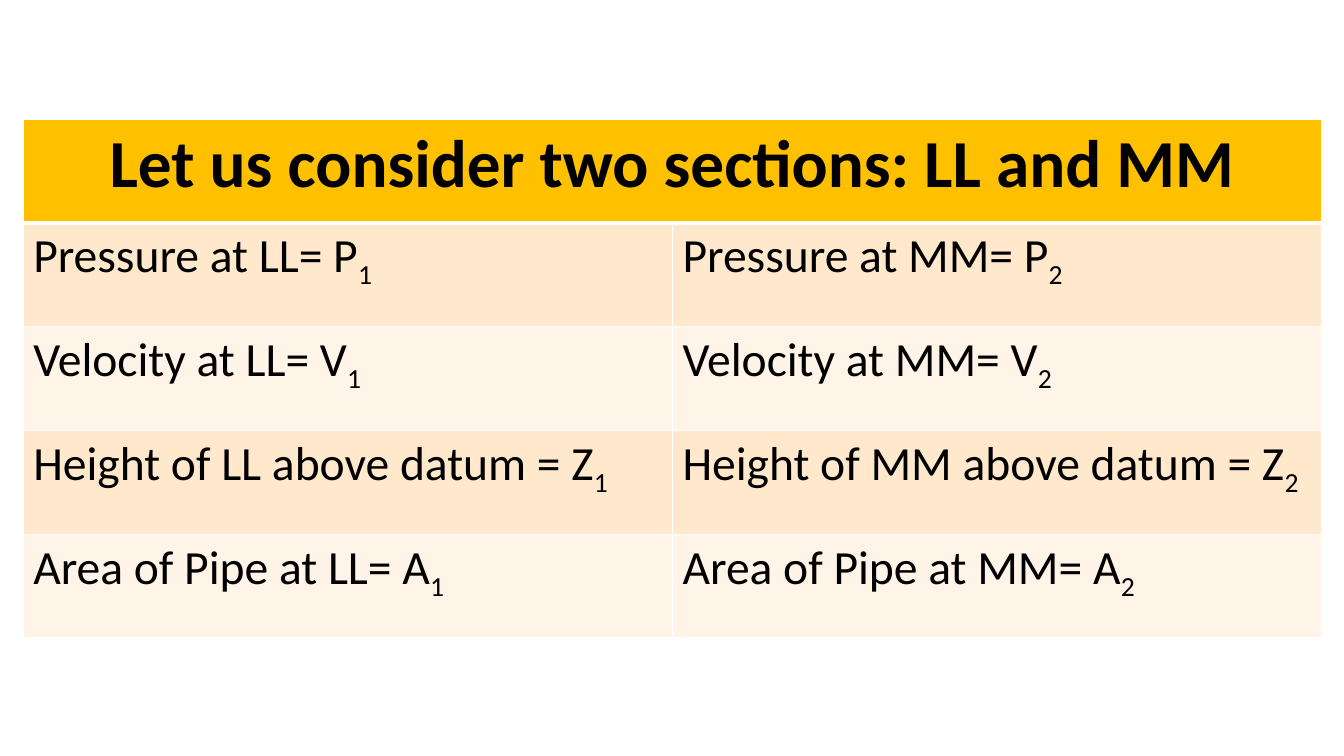
"""Build a slide with a table of flow quantities at sections LL and MM."""
from lxml.etree import fromstring
from pptx import Presentation
from pptx.dml.color import RGBColor
from pptx.enum.text import PP_ALIGN
from pptx.util import Pt

PX = 9144
THEME = {
    "font": "Calibri", "text": "000000", "border": "FFFFFF",
    "header": "FFC000", "bands": ["FFE8CC", "FFF4E7"],
    "header_size": 48, "body_size": 34,
}
A = "http://schemas.openxmlformats.org/drawingml/2006/main"
TITLE = "Let us consider two sections: LL and MM"
SECTIONS = ["LL", "MM"]
QUANTITIES = [
    "Pressure at {}= P",
    "Velocity at {}= V",
    "Height of {} above datum = Z",
    "Area of Pipe at {}= A",
]


def style_cell(cell, fill, size, bold, widths):
    cell.fill.solid()
    cell.fill.fore_color.rgb = RGBColor.from_string(fill)
    for r in cell.text_frame.paragraphs[0].runs:
        r.font.name = THEME["font"]
        r.font.size = Pt(size)
        r.font.bold = bold
        r.font.color.rgb = RGBColor.from_string(THEME["text"])
    tcPr = cell._tc.get_or_add_tcPr()
    for i, (side, width) in enumerate(zip("LRTB", widths)):
        tcPr.insert(i, fromstring(
            f'<a:ln{side} xmlns:a="{A}" w="{Pt(width)}"><a:solidFill>'
            f'<a:srgbClr val="{THEME["border"]}"/></a:solidFill></a:ln{side}>'))


prs = Presentation()
prs.slide_width, prs.slide_height = 1333 * PX, 750 * PX
s = prs.slides.add_slide(prs.slide_layouts[6])

rows, cols = len(QUANTITIES) + 1, len(SECTIONS)
table = s.shapes.add_table(rows, cols, 23 * PX, 118 * PX,
                           cols * 644 * PX, rows * 103 * PX).table

header = table.cell(0, 0)
header.merge(table.cell(0, cols - 1))
header.text_frame.text = TITLE
header.text_frame.paragraphs[0].alignment = PP_ALIGN.CENTER
for cell in table.rows[0].cells:
    style_cell(cell, THEME["header"], THEME["header_size"], True, [1, 1, 1, 3])

for i, quantity in enumerate(QUANTITIES):
    for j, section in enumerate(SECTIONS):
        cell = table.cell(i + 1, j)
        p = cell.text_frame.paragraphs[0]
        p.text = quantity.format(section)
        r = p.add_run()
        r.text = str(j + 1)
        r.font._element.set("baseline", "-25000")
        style_cell(cell, THEME["bands"][i % 2], THEME["body_size"], False,
                   [1, 1, 3 if i == 0 else 1, 1])

prs.save("out.pptx")
